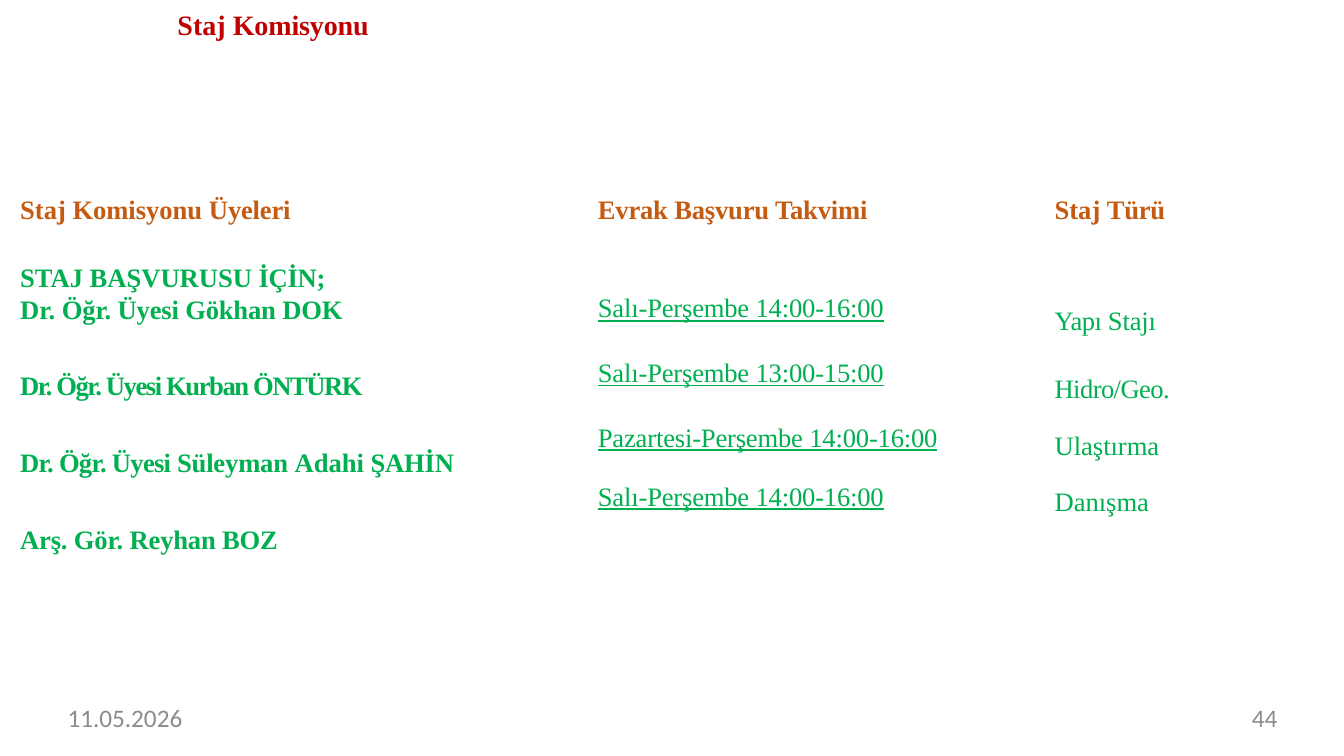
from pptx import Presentation
from pptx.enum.text import PP_ALIGN
from pptx.dml.color import RGBColor
from pptx.util import Inches, Pt

COLORS = {"title": "C00000", "header": "C55A11", "body": "00AF50", "footer": "8C8C8C"}
SERIF = "Times New Roman"
FORMATS = {
    "title": {"name": SERIF, "size": Pt(20), "bold": True},
    "header": {"name": SERIF, "size": Pt(19), "bold": True},
    "member": {"name": SERIF, "size": Pt(19), "bold": True},
    "hours": {"name": SERIF, "size": Pt(19), "bold": False, "underline": True},
    "kind": {"name": SERIF, "size": Pt(19), "bold": False},
    "footer": {"name": "Calibri", "size": Pt(18)},
}
COLUMN_WIDTHS = [5.28, 4.66, 3.06]
COLUMN_INDENTS = [0.03, 0.48, 0.35]
ROW_HEIGHTS = [0.65, 2.99]

HEADERS = [
    [("Staj Komisyonu ", 0), ("Üyeleri", -0.1)],
    [("Evrak Başvuru Takvimi", -0.1)],
    [("Staj ", 0), ("Türü", -0.2)],
]
MEMBER_GAP = {"line_spacing": Pt(48.8), "space_before": Pt(5.9)}
MEMBERS = [
    ([("STAJ BAŞVURUSU ", 0), ("İÇİN;", -0.2)], {"line_spacing": Pt(22.4)}),
    ([("Dr. ", 0), ("Öğr. Üyesi Gökhan DOK", -0.1)], {"space_before": Pt(1.6)}),
    ([("Dr. Öğr. Üyesi Kurban ÖNTÜRK", -1)], MEMBER_GAP),
    ([("Dr. Öğr. Üyesi ", -0.5), ("Süleyman ", -0.1), ("Adahi ", 0), ("ŞAHİN", -0.1)], MEMBER_GAP),
    ([("Arş. Gör. Reyhan BOZ", -0.1)], MEMBER_GAP),
]
HOURS = [
    ([("Salı-Perşembe 14:00-16:00", -0.1)], {}),
    ([("Salı-Perşembe 13:00-15:00", -0.1)], {"space_before": Pt(25.1)}),
    ([("Pazartesi-Perşembe 14:00-16:00", -0.1)], {"space_before": Pt(25.2)}),
    ([("Salı-Perşembe 14:00-16:00", -0.1)], {"space_before": Pt(21)}),
]
KIND_LINE = {"line_spacing": Pt(48.7)}
KIND_GAP = {"line_spacing": 1.07, "space_before": Pt(17.9)}
KINDS = [
    ([("Yapı ", -0.4), ("Stajı", -0.1)], KIND_LINE),
    ([("Hidro/Geo.", -0.4)], KIND_LINE),
    ([("Ulaştırma", 0)], KIND_GAP),
    ([("Danışma", 0)], KIND_GAP),
]


def apply(target, values):
    for name, value in values.items():
        setattr(target, name, value)


def write(frame, lines, style, color):
    for index, (spans, spacing) in enumerate(lines):
        para = frame.add_paragraph() if index else frame.paragraphs[0]
        apply(para, spacing)
        for text, tracking in spans:
            span = para.add_run()
            span.text = text
            apply(span.font, FORMATS[style])
            span.font.color.rgb = RGBColor.from_string(COLORS[color])
            if tracking:
                span.font._element.set("spc", str(round(tracking * 100)))


def add_label(page, box, spans, style, top_inset=0, align=PP_ALIGN.LEFT):
    frame = page.shapes.add_textbox(*map(Inches, box)).text_frame
    apply(frame, {"word_wrap": True, "margin_left": 0, "margin_right": 0,
                  "margin_top": Inches(top_inset), "margin_bottom": 0})
    write(frame, [(spans, {"alignment": align})], style, style)


def add_commission_table(page, box):
    table = page.shapes.add_table(2, 3, *map(Inches, box)).table
    apply(table, {"first_row": False, "horz_banding": False})
    for row, height in zip(table.rows, ROW_HEIGHTS):
        row.height = Inches(height)
    bodies = [(MEMBERS, "member", 0), (HOURS, "hours", 0.32), (KINDS, "kind", 0.06)]
    for index, (lines, style, top_inset) in enumerate(bodies):
        table.columns[index].width = Inches(COLUMN_WIDTHS[index])
        header = [(HEADERS[index], {"line_spacing": Pt(20.7)})]
        contents = [(header, "header", "header", 0), (lines, style, "body", top_inset)]
        for row, (content, font_style, color, inset) in enumerate(contents):
            cell = table.cell(row, index)
            cell.fill.background()
            apply(cell, {"margin_left": Inches(COLUMN_INDENTS[index]), "margin_right": 0,
                         "margin_top": Inches(inset), "margin_bottom": 0})
            write(cell.text_frame, content, font_style, color)


def add_footer(page, box):
    left, top, width, height = box
    label_width = 3.07
    add_label(page, (left, top, label_width, height), [("11.05.2026", 0)], "footer")
    add_label(page, (left + width - label_width, top, label_width, height),
              [("44", 0)], "footer", align=PP_ALIGN.RIGHT)


def main():
    deck = Presentation()
    deck.slide_width, deck.slide_height = Inches(13.33), Inches(7.5)
    page = deck.slides.add_slide(deck.slide_layouts[6])
    add_commission_table(page, (0.17, 1.95, sum(COLUMN_WIDTHS), sum(ROW_HEIGHTS)))
    add_label(page, (1.76, 0.06, 6.72, 0.36), [("Staj ", 0), ("Komisyonu", -0.1)], "title", 0.01)
    add_footer(page, (0.67, 6.97, 12, 0.3))
    deck.save("out.pptx")


if __name__ == "__main__":
    main()
